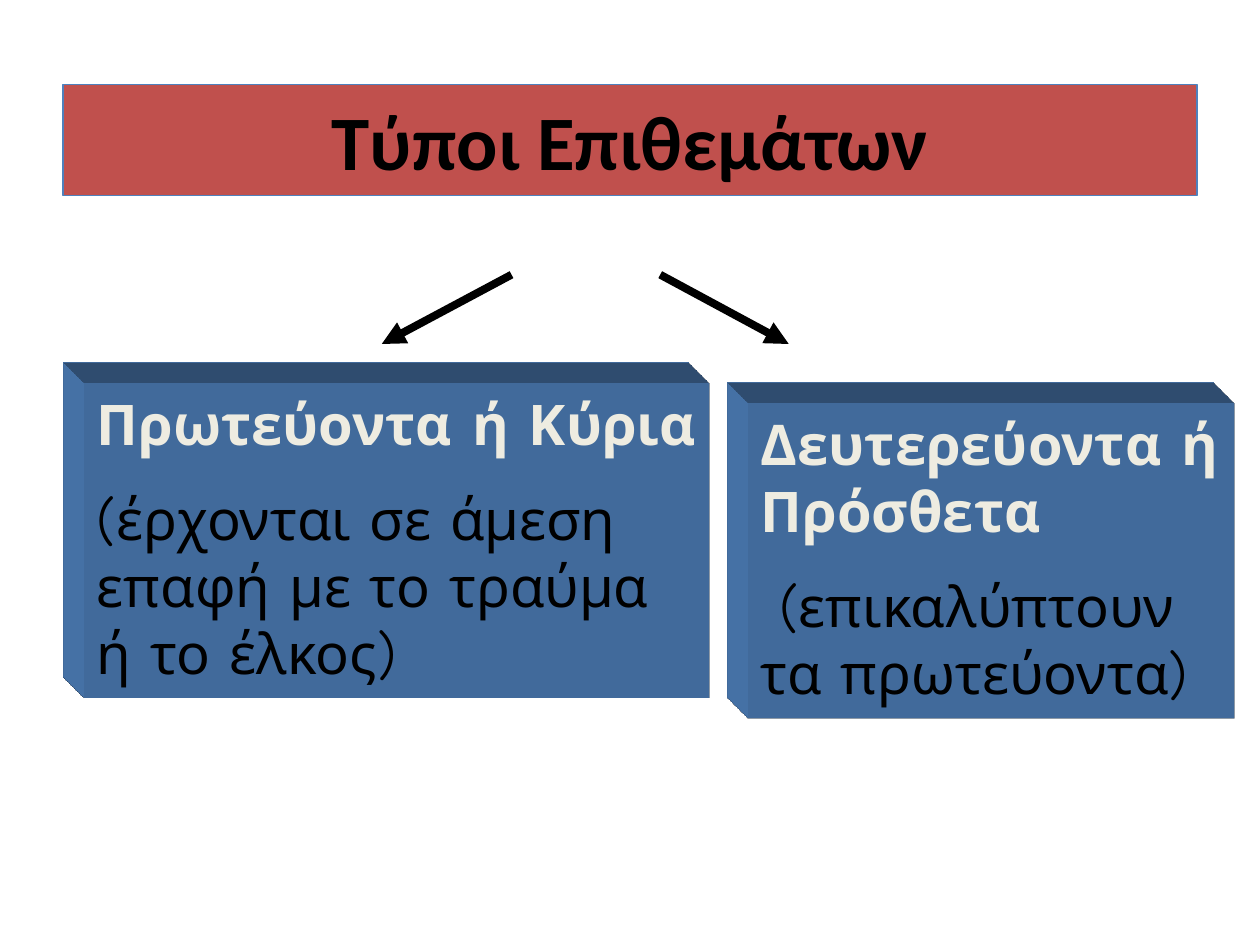
import lxml.etree
import pptx
import pptx.dml.color
import pptx.enum.shapes
import pptx.enum.text
import pptx.oxml
import pptx.oxml.ns
import pptx.util
from dataclasses import dataclass

Inches = pptx.util.Inches
Pt = pptx.util.Pt


@dataclass(frozen=True)
class Theme:
    banner: str = "C0504D"
    block: str = "4F81BD"
    heading: str = "EEECE1"
    ink: str = "000000"
    title_font: str = "Calibri"
    body_font: str = "Comic Neue"
    title_size: int = 44
    body_size: int = 32
    paragraph_gap: int = 16
    outline: float = 0.75
    arrow: float = 4.5


THEME = Theme()


def color(value):
    return pptx.dml.color.RGBColor.from_string(value)


def format_runs(paragraph, font_name, size, value, bold):
    for run in paragraph.runs:
        run.font.name = font_name
        run.font.size = Pt(size)
        run.font.color.rgb = color(value)
        run.font.bold = bold


def add_rectangle(slide, box, fill):
    shape = slide.shapes.add_shape(
        pptx.enum.shapes.MSO_SHAPE.RECTANGLE, *map(Inches, box)
    )
    shape.shadow.inherit = False
    shape.fill.solid()
    shape.fill.fore_color.rgb = color(fill)
    return shape


def add_extrusion(shape, value):
    namespace = pptx.oxml.ns.nsdecls("a")
    properties = shape._element.spPr
    properties.append(pptx.oxml.parse_xml(
        f'<a:scene3d {namespace}><a:camera prst="legacyObliqueTopLeft"/>'
        '<a:lightRig rig="legacyFlat3" dir="b"/></a:scene3d>'
    ))
    properties.append(pptx.oxml.parse_xml(
        f'<a:sp3d {namespace} extrusionH="430200" prstMaterial="legacyMatte">'
        '<a:bevelT w="13500" h="13500" prst="angle"/>'
        '<a:bevelB w="13500" h="13500" prst="angle"/>'
        f'<a:extrusionClr><a:srgbClr val="{value}"/></a:extrusionClr></a:sp3d>'
    ))


def add_title_banner(slide, box, text):
    banner = add_rectangle(slide, box, THEME.banner)
    banner.line.color.rgb = color(THEME.block)
    banner.line.width = Pt(THEME.outline)
    banner.text_frame.text = text
    banner.text_frame.vertical_anchor = pptx.enum.text.MSO_ANCHOR.MIDDLE
    paragraph = banner.text_frame.paragraphs[0]
    paragraph.alignment = pptx.enum.text.PP_ALIGN.CENTER
    format_runs(paragraph, THEME.title_font, THEME.title_size, THEME.ink, True)


def add_arrow(slide, start, end):
    arrow = slide.shapes.add_connector(
        pptx.enum.shapes.MSO_CONNECTOR.STRAIGHT, *map(Inches, start + end)
    )
    arrow.line.color.rgb = color(THEME.ink)
    arrow.line.width = Pt(THEME.arrow)
    line = arrow.line._get_or_add_ln()
    lxml.etree.SubElement(line, pptx.oxml.ns.qn("a:tailEnd"), type="triangle")
    lxml.etree.SubElement(arrow._element.spPr, pptx.oxml.ns.qn("a:effectLst"))


def add_type_block(slide, box, heading, description):
    block = add_rectangle(slide, box, THEME.block)
    block.line.fill.background()
    add_extrusion(block, THEME.block)
    frame = block.text_frame
    frame.word_wrap = True
    frame.auto_size = pptx.enum.text.MSO_AUTO_SIZE.SHAPE_TO_FIT_TEXT
    frame.vertical_anchor = pptx.enum.text.MSO_ANCHOR.TOP
    frame.text = f"{heading}\n{description}"
    styles = [(THEME.heading, True), (THEME.ink, False)]
    for paragraph, (value, bold) in zip(frame.paragraphs, styles):
        paragraph.alignment = pptx.enum.text.PP_ALIGN.LEFT
        format_runs(paragraph, THEME.body_font, THEME.body_size, value, bold)
    frame.paragraphs[1].space_before = Pt(THEME.paragraph_gap)


def main():
    presentation = pptx.Presentation()
    presentation.slide_width = Inches(10)
    presentation.slide_height = Inches(7.5)
    slide = presentation.slides.add_slide(presentation.slide_layouts[6])

    add_title_banner(slide, (0.5, 0.67, 9, 0.88), "Τύποι Επιθεμάτων")
    add_arrow(slide, (4.06, 2.18), (3.03, 2.73))
    add_arrow(slide, (5.24, 2.18), (6.26, 2.73))
    add_type_block(
        slide, (0.67, 3.04, 4.96, 2.5), "Πρωτεύοντα ή Κύρια",
        "(έρχονται σε άμεση επαφή με το τραύμα ή το έλκος)",
    )
    add_type_block(
        slide, (5.94, 3.2, 3.86, 2.5), "Δευτερεύοντα ή Πρόσθετα",
        " (επικαλύπτουν τα πρωτεύοντα)",
    )
    presentation.save("out.pptx")


if __name__ == "__main__":
    main()
